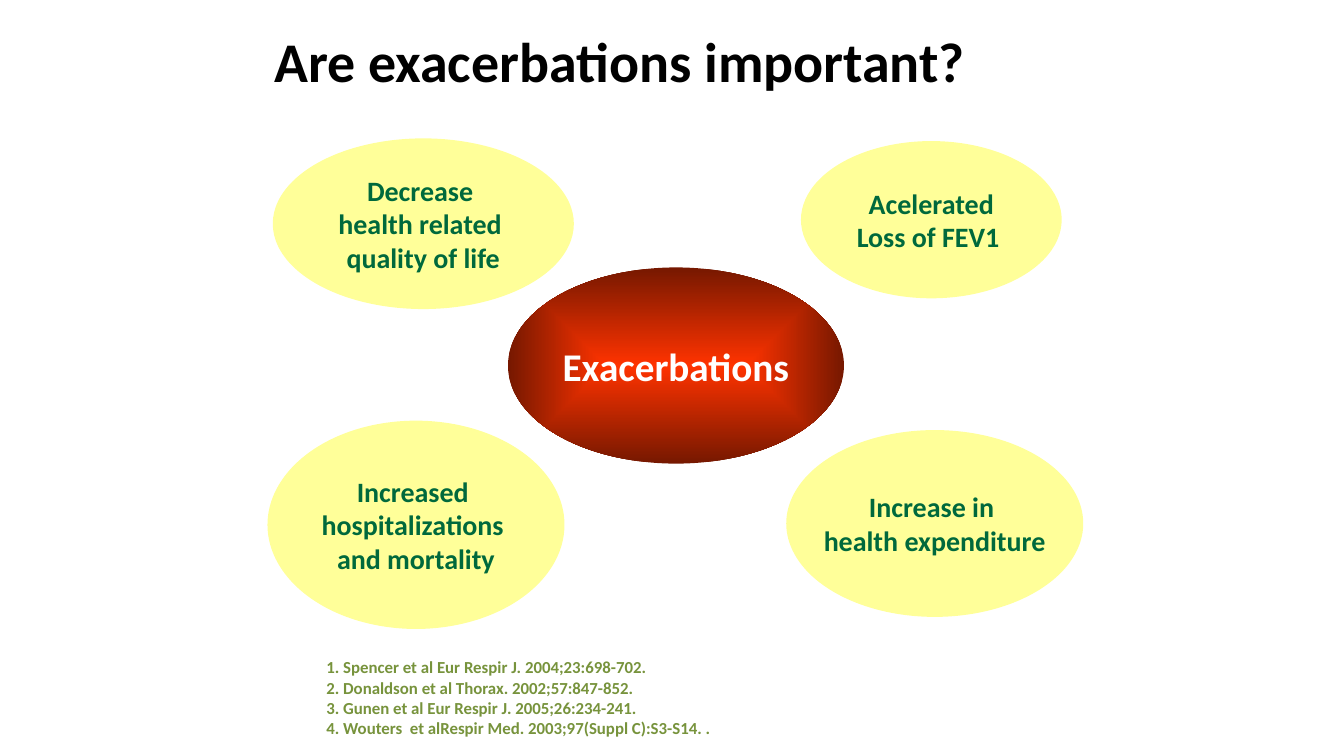
from lxml import etree
from pptx import Presentation
from pptx.dml.color import RGBColor
from pptx.enum.shapes import MSO_SHAPE
from pptx.enum.text import MSO_ANCHOR, MSO_AUTO_SIZE, PP_ALIGN
from pptx.oxml.ns import qn
from pptx.util import Inches, Pt

OVAL = MSO_SHAPE.OVAL
MIDDLE, TOP = MSO_ANCHOR.MIDDLE, MSO_ANCHOR.TOP
LEFT, CENTER, JUSTIFY = PP_ALIGN.LEFT, PP_ALIGN.CENTER, PP_ALIGN.JUSTIFY
FIT = MSO_AUTO_SIZE.SHAPE_TO_FIT_TEXT

TITLE = "Are exacerbations important?"
CORE = ["Exacerbations"]
EFFECTS = [
    ((1.99, 3.13, 2.21, 1.55), ["Increased ", "hospitalizations ", "and mortality"]),
    ((5.85, 3.2, 2.21, 1.39), ["Increase in ", "health expenditure"]),
    ((2.03, 1.03, 2.24, 1.27), ["Decrease ", "health related ", "quality of life"]),
    ((5.96, 1.05, 1.94, 1.17), ["Acelerated", "Loss of FEV1 "]),
]
SOURCES = [
    "1. Spencer et al Eur Respir J. 2004;23:698-702. ",
    "2. Donaldson et al Thorax. 2002;57:847-852. ",
    "3. Gunen et al Eur Respir J. 2005;26:234-241. ",
    "4. Wouters  et alRespir Med. 2003;97(Suppl C):S3-S14. .",
]


def color(code):
    return RGBColor.from_string(code)


def write(shape, lines, size, code, align, pad=(0.07, 0.04), anchor=MIDDLE, wrap=True):
    frame = shape.text_frame
    frame.word_wrap = wrap
    frame.vertical_anchor = anchor
    frame.margin_left = frame.margin_right = Inches(pad[0])
    frame.margin_top = frame.margin_bottom = Inches(pad[1])
    frame.text = "\n".join(lines)
    for para in frame.paragraphs:
        para.alignment = align
        font = para.font
        font.name, font.size, font.bold = "Calibri", Pt(size), True
        font.color.rgb = color(code)


def oval(slide, box, lines, size, code):
    shape = slide.shapes.add_shape(OVAL, *map(Inches, box))
    shape.shadow.inherit = False
    shape.line.fill.background()
    write(shape, lines, size, code, CENTER, wrap=False)
    return shape


def glow(shape, inner, outer):
    shape.fill.gradient()
    for stop, place, code in zip(shape.fill.gradient_stops, (0, 1), (inner, outer)):
        stop.position = place
        stop.color.rgb = color(code)
    grad = shape._element.spPr.find(qn("a:gradFill"))
    grad.remove(grad.find(qn("a:lin")))
    route = etree.SubElement(grad, qn("a:path"), {"path": "shape"})
    etree.SubElement(route, qn("a:fillToRect"), dict.fromkeys("ltrb", "50000"))


def main():
    deck = Presentation()
    deck.slide_width = Inches(10)
    deck.slide_height = deck.slide_width * 9 // 16
    slide = deck.slides.add_slide(deck.slide_layouts[5])

    core = oval(slide, (3.78, 1.99, 2.5, 1.46), CORE, 21, "FFFFFF")
    glow(core, "FF3300", "761800")
    for box, lines in EFFECTS:
        effect = oval(slide, box, lines, 15, "00693C")
        effect.fill.solid()
        effect.fill.fore_color.rgb = color("FFFF99")

    title = slide.shapes.title
    title.left, title.top, title.width, title.height = map(Inches, (1.97, 0.16, 6.06, 0.58))
    write(title, [TITLE], 30, "000000", LEFT)
    title.text_frame.auto_size = FIT

    notes = slide.shapes.add_textbox(*map(Inches, (2.33, 4.84, 4.88, 0.71)))
    write(notes, SOURCES, 9, "77933C", JUSTIFY, (0.1, 0.05), TOP)
    notes.text_frame.auto_size = FIT

    deck.save("out.pptx")


if __name__ == "__main__":
    main()
